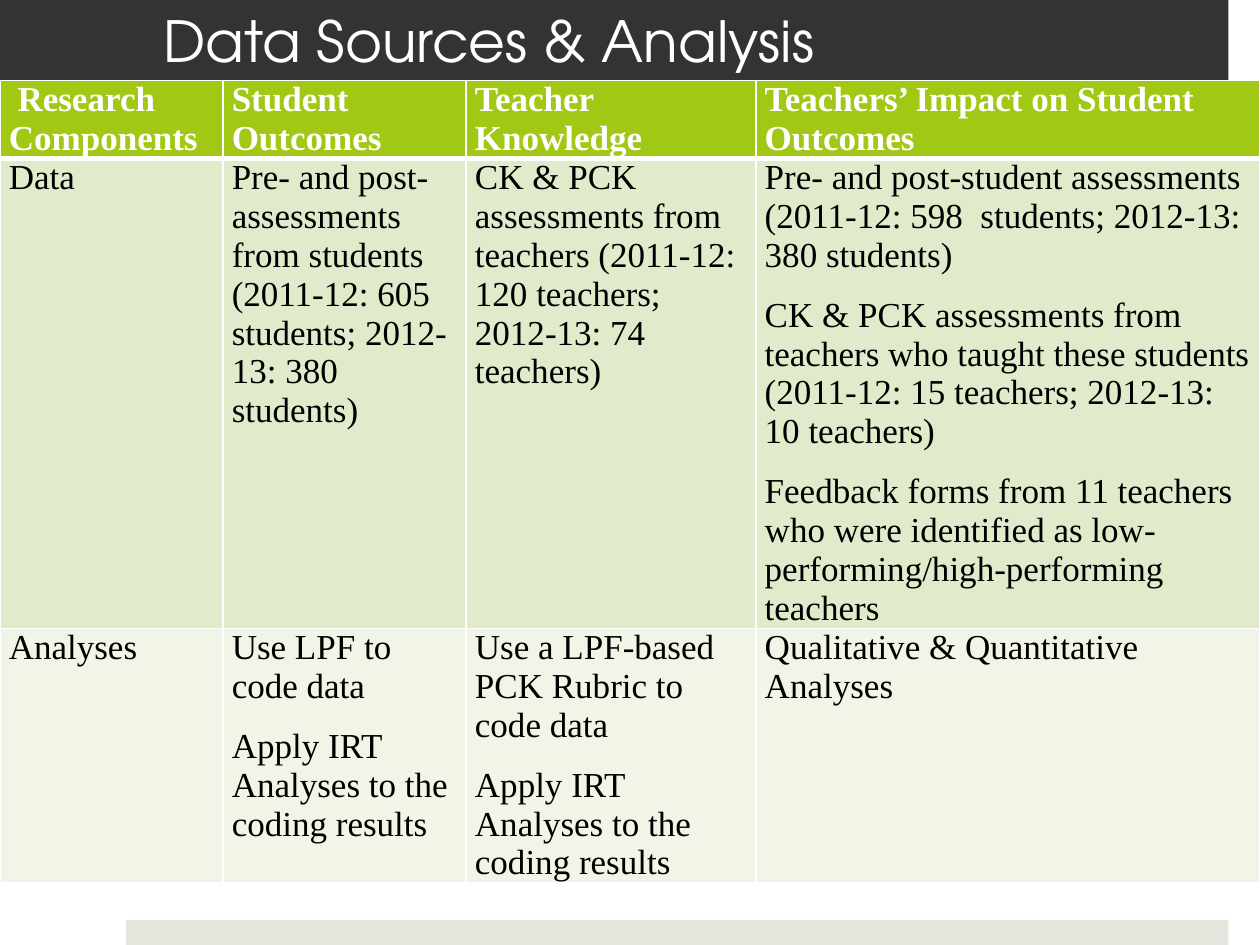
from lxml import etree
from pptx import Presentation
from pptx import util as u
from pptx.dml.color import RGBColor
from pptx.enum import shapes, text
from pptx.oxml import ns

W, H = 10, 7.5
TITLE_H = 0.64
COLS = [1.77, 1.93, 2.3, 4]
ROWS = [0.61, 3.73, 2.01]
FILLS = ["A2C816", "E0EBCC", "F0F5E8"]
IRT = "Apply IRT Analyses to the coding results"
CELLS = [
    [[" Research Components"], ["Student Outcomes"], ["Teacher Knowledge"],
     ["Teachers’ Impact on Student Outcomes"]],
    [["Data"],
     ["Pre- and post-assessments from students (2011-12: 605 students; 2012-13: 380 students)"],
     ["CK & PCK assessments from teachers (2011-12: 120 teachers; 2012-13: 74 teachers)"],
     ["Pre- and post-student assessments (2011-12: 598  students; 2012-13: 380 students)",
      "CK & PCK assessments from teachers who taught these students "
      "(2011-12: 15 teachers; 2012-13: 10 teachers)",
      "Feedback forms from 11 teachers who were identified as "
      "low-performing/high-performing teachers"]],
    [["Analyses"], ["Use LPF to code data", IRT],
     ["Use a LPF-based PCK Rubric to code data", IRT],
     ["Qualitative & Quantitative Analyses"]],
]
TITLE = {"name": "TeX Gyre Adventor", "size": u.Pt(32.4)}
BODY = {"name": "Times New Roman", "size": u.Pt(20), "bold": False}
HEAD = {**BODY, "bold": True}
PARA = {"space_before": u.Pt(6), "space_after": u.Pt(6)}


def assign(obj, values):
    """Set each attribute of obj named in values."""
    for key, value in values.items():
        setattr(obj, key, value)


def paint(fmt, color):
    """Give a fill a solid hex colour."""
    fmt.solid()
    fmt.fore_color.rgb = RGBColor.from_string(color)


def margins(left, top, right, bottom):
    """Return the four inner margins in inches as format values."""
    sides = ("left", "top", "right", "bottom")
    return {f"margin_{k}": u.Inches(v) for k, v in zip(sides, (left, top, right, bottom))}


def write(p, content, font, color):
    """Put one formatted run into a paragraph."""
    r = p.add_run()
    r.text = content
    assign(r.font, font)
    paint(r.font.fill, color)


def add_bar(s, left, top, width, height, color):
    """Add a plain rectangle placed in shares of the slide."""
    sp = s.shapes.add_shape(
        shapes.MSO_SHAPE.RECTANGLE, u.Inches(left * W), u.Inches(top * H),
        u.Inches(width * W), u.Inches(height * H))
    sp.shadow.inherit = False
    sp.line.fill.background()
    paint(sp.fill, color)
    return sp


def add_title(s, content):
    """Add the dark title bar with its heading."""
    tf = add_bar(s, 0, 0, 0.975, TITLE_H / H, "333333").text_frame
    assign(tf, {"word_wrap": True, "vertical_anchor": text.MSO_ANCHOR.MIDDLE,
                **margins(1.3, 0.05, 0.3, 0.05)})
    p = tf.paragraphs[0]
    p.alignment = text.PP_ALIGN.LEFT
    write(p, content, TITLE, "FFFFFF")


def add_borders(cell, widths):
    """Draw white cell borders, widths in points by side letter."""
    for i, (side, width) in enumerate(widths.items()):
        ln = etree.Element(ns.qn(f"a:ln{side}"), w=str(u.Pt(width)))
        fill = etree.SubElement(ln, ns.qn("a:solidFill"))
        etree.SubElement(fill, ns.qn("a:srgbClr"), val="FFFFFF")
        cell._tc.get_or_add_tcPr().insert(i, ln)


def fill_cell(cell, row, paragraphs):
    """Write and style one cell according to its row."""
    paint(cell.fill, FILLS[row])
    assign(cell, margins(0.07, 0, 0.07, 0))
    add_borders(cell, {"L": 1, "R": 1, "T": 3 if row == 1 else 1, "B": 3 if row == 0 else 1})
    tf = cell.text_frame
    for i, content in enumerate(paragraphs):
        p = tf.add_paragraph() if i else tf.paragraphs[0]
        assign(p, PARA)
        write(p, content, BODY if row else HEAD, "000000" if row else "FFFFFF")


def add_grid(s):
    """Add the table of data sources and analyses."""
    table = s.shapes.add_table(
        len(ROWS), len(COLS), 0, u.Inches(TITLE_H),
        u.Inches(sum(COLS)), u.Inches(sum(ROWS))).table
    for col, width in zip(table.columns, COLS):
        col.width = u.Inches(width)
    for r, height in enumerate(ROWS):
        table.rows[r].height = u.Inches(height)
        for c, paragraphs in enumerate(CELLS[r]):
            fill_cell(table.cell(r, c), r, paragraphs)


def main():
    """Build and save the slide."""
    prs = Presentation()
    assign(prs, {"slide_width": u.Inches(W), "slide_height": u.Inches(H)})
    s = prs.slides.add_slide(prs.slide_layouts[6])
    add_bar(s, 0.1, 7.3 / H, 0.875, 0.2 / H, "E4E6DE")
    add_title(s, "Data Sources & Analysis")
    add_grid(s)
    prs.save("out.pptx")


if __name__ == "__main__":
    main()
